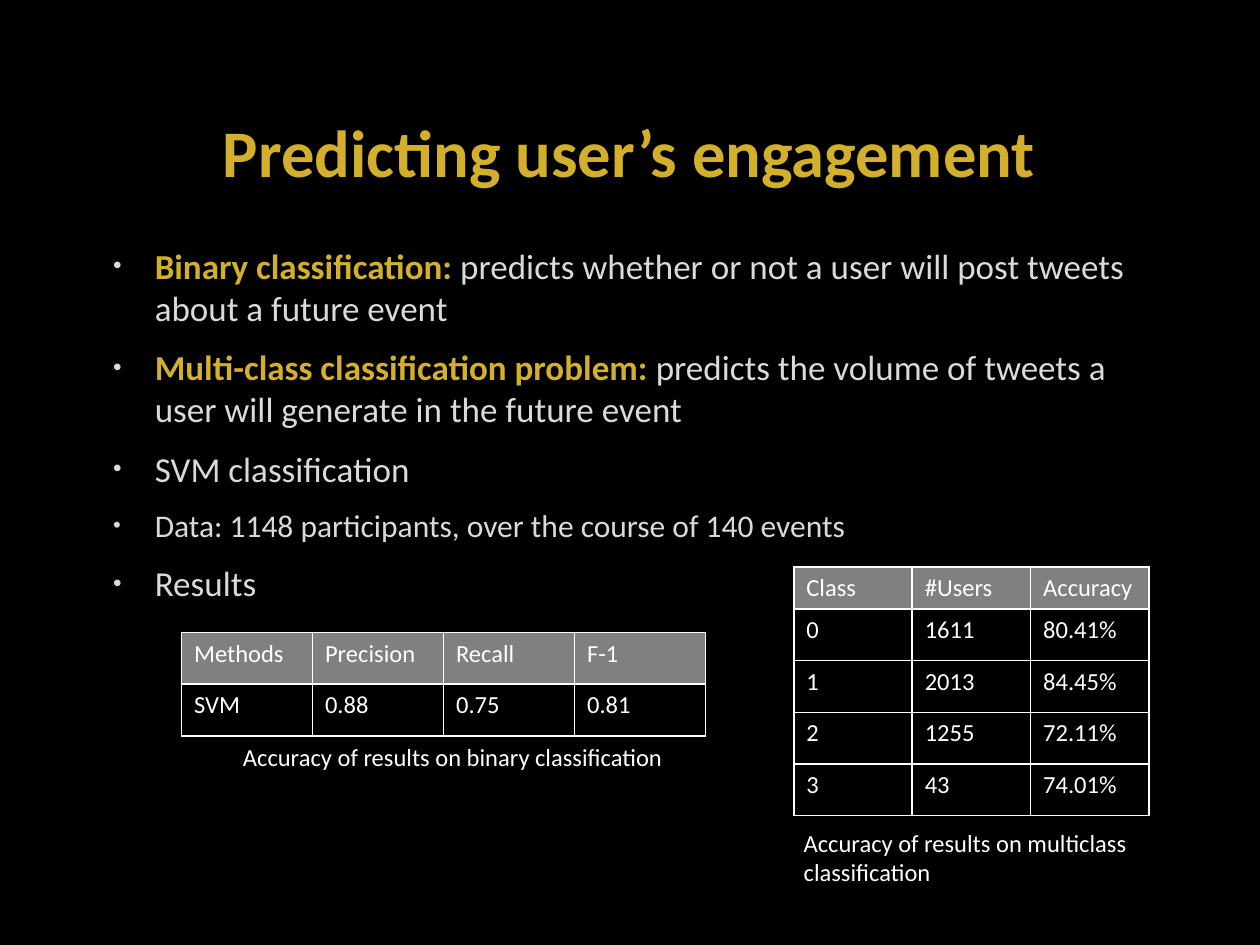
from typing import NamedTuple

from lxml.etree import SubElement as Sub
from pptx import Presentation
from pptx.dml.color import RGBColor as RGB
from pptx.enum.text import MSO_ANCHOR as Anchor, PP_ALIGN as Align
from pptx.oxml.ns import qn
from pptx.util import Inches, Pt

BLACK = RGB(0x00, 0x00, 0x00)
WHITE = RGB(0xFF, 0xFF, 0xFF)
GOLD = RGB(0xD3, 0xB0, 0x2C)
PALE = RGB(0xDA, 0xDA, 0xDA)
GREY = RGB(0x80, 0x80, 0x80)
FONT = "Calibri"
COLS = 10
WIDE, HIGH = Inches(10), Inches(7.5)
UNIT = WIDE // COLS  # side of one square grid cell


class Box(NamedTuple):
    """Place and size in grid cells."""
    left: float
    top: float
    width: float
    height: float


class Point(NamedTuple):
    lead: str
    text: str
    size: int = 20


class Note(NamedTuple):
    box: Box
    text: str


class Grid(NamedTuple):
    left: float
    top: float
    col: float
    head: float
    rows: list[tuple[str, ...]]


ROW = 0.41
TITLE = Box(0.75, 0.67, 8.49, 1.06)
BODY = Box(0.75, 1.89, 8.49, 4.97)
POINTS = [
    Point("Binary classification: ",
          "predicts whether or not a user will post tweets about a future event"),
    Point("Multi-class classification problem: ",
          "predicts the volume of tweets a user will generate in the future event"),
    Point("", "SVM classification"),
    Point("", "Data: 1148 participants, over the course of 140 events", 18),
    Point("", "Results"),
]
NOTES = [
    Note(Box(1.83, 5.84, 3.65, 0.34), "Accuracy of results on binary classification"),
    Note(Box(6.28, 6.52, 3.05, 0.57), "Accuracy of results on multiclass classification"),
]
GRIDS = [
    Grid(1.44, 5.02, 1.04, ROW, [
        ("Methods", "Precision", "Recall", "F-1"),
        ("SVM", "0.88", "0.75", "0.81"),
    ]),
    Grid(6.3, 4.5, 0.94, 0.33, [
        ("Class", "#Users", "Accuracy"),
        ("0", "1611", "80.41%"),
        ("1", "2013", "84.45%"),
        ("2", "1255", "72.11%"),
        ("3", "43", "74.01%"),
    ]),
]


def span(count: float) -> int:
    """Length of a number of grid cells."""
    return round(count * UNIT)


def style(font, size: int, color: RGB, bold: bool = False) -> None:
    font.name, font.size, font.bold = FONT, Pt(size), bold
    font.color.rgb = color


def add_title(slide, text: str) -> None:
    title = slide.shapes.title
    title.left, title.top, title.width, title.height = map(span, TITLE)
    frame = title.text_frame
    frame.text = text
    frame.vertical_anchor = Anchor.MIDDLE
    para = frame.paragraphs[0]
    para.alignment = Align.CENTER
    style(para.runs[0].font, 38, GOLD, True)


def add_frame(slide, box: Box):
    frame = slide.shapes.add_textbox(*map(span, box)).text_frame
    frame.word_wrap = True
    return frame


def add_bullet(para) -> None:
    props = para._p.get_or_add_pPr()
    props.set("marL", str(span(0.38)))
    props.set("indent", str(span(-0.33)))
    Sub(Sub(props, qn("a:buClr")), qn("a:srgbClr"), val=str(PALE))
    Sub(props, qn("a:buSzPct"), val="70000")
    Sub(props, qn("a:buFont"), typeface="Arial")
    Sub(props, qn("a:buChar"), char="•")


def add_points(slide) -> None:
    frame = add_frame(slide, BODY)
    for i, point in enumerate(POINTS):
        para = frame.add_paragraph() if i else frame.paragraphs[0]
        add_bullet(para)
        para.space_before = Pt(0.2 * point.size if i else 0)
        para.space_after = Pt(6)
        for text, color in ((point.lead, GOLD), (point.text, PALE)):
            if text:
                run = para.add_run()
                run.text = text
                style(run.font, point.size, color, color == GOLD)


def add_note(slide, note: Note) -> None:
    frame = add_frame(slide, note.box)
    frame.text = note.text
    style(frame.paragraphs[0].runs[0].font, 14, WHITE)


def add_edges(cell) -> None:
    props = cell._tc.get_or_add_tcPr()
    for i, side in enumerate(("lnL", "lnR", "lnT", "lnB")):
        line = props.makeelement(qn(f"a:{side}"), {"w": str(Pt(1))})
        Sub(Sub(line, qn("a:solidFill")), qn("a:srgbClr"), val=str(WHITE))
        props.insert(i, line)


def add_grid(slide, grid: Grid) -> None:
    rows, cols = len(grid.rows), len(grid.rows[0])
    box = Box(grid.left, grid.top, cols * grid.col, grid.head + (rows - 1) * ROW)
    table = slide.shapes.add_table(rows, cols, *map(span, box)).table
    table.first_row = table.horz_banding = False
    for col in table.columns:
        col.width = span(grid.col)
    for r, texts in enumerate(grid.rows):
        table.rows[r].height = span(ROW if r else grid.head)
        for c, text in enumerate(texts):
            cell = table.cell(r, c)
            cell.text = text
            style(cell.text_frame.paragraphs[0].runs[0].font, 14, WHITE)
            if r:
                cell.fill.background()
            else:
                cell.fill.solid()
                cell.fill.fore_color.rgb = GREY
            add_edges(cell)


def main() -> None:
    deck = Presentation()
    deck.slide_width, deck.slide_height = WIDE, HIGH
    slide = deck.slides.add_slide(deck.slide_layouts.get_by_name("Title Only"))
    slide.background.fill.solid()
    slide.background.fill.fore_color.rgb = BLACK
    add_title(slide, "Predicting user’s engagement")
    add_points(slide)
    for note in NOTES:
        add_note(slide, note)
    for grid in GRIDS:
        add_grid(slide, grid)
    deck.save("out.pptx")


if __name__ == "__main__":
    main()
